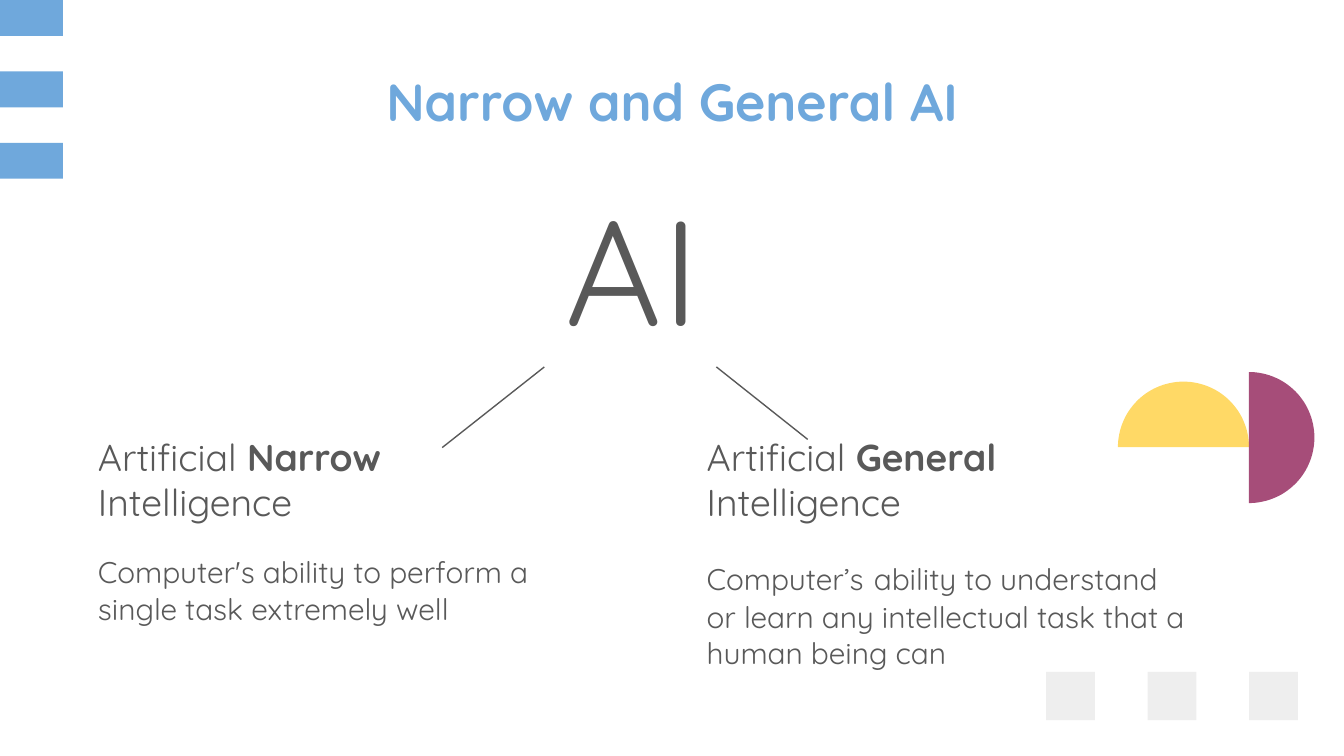
"""Build the slide on narrow and general AI."""
from math import cos, radians, sin

from lxml.etree import SubElement
from pptx import Presentation
from pptx.dml.color import RGBColor
from pptx.enum.shapes import MSO_CONNECTOR, MSO_SHAPE
from pptx.enum.text import MSO_ANCHOR, PP_ALIGN
from pptx.oxml.ns import qn
from pptx.util import Pt

COLORS = {
    "blue": "6FA8DC",
    "grey": "EEEEEE",
    "yellow": "FFD966",
    "plum": "A64D79",
    "text": "595959",
}


def color(name):
    return RGBColor.from_string(COLORS[name])


def add_text(paragraphs, left, top, width, height, ink="text",
             align=PP_ALIGN.LEFT, anchor=MSO_ANCHOR.TOP):
    frame = slide.shapes.add_textbox(Pt(left), Pt(top), Pt(width), Pt(height)).text_frame
    frame.word_wrap = True
    frame.vertical_anchor = anchor
    frame.margin_left = frame.margin_right = Pt(7.2)
    frame.margin_top = frame.margin_bottom = Pt(7.2)
    for index, (runs, pitch, gap) in enumerate(paragraphs):
        paragraph = frame.add_paragraph() if index else frame.paragraphs[0]
        paragraph.alignment = align
        paragraph.line_spacing = Pt(pitch)
        paragraph.space_before = Pt(gap)
        for words, size, bold in runs:
            run = paragraph.add_run()
            run.text = words
            run.font.name = "Quicksand"
            run.font.size = Pt(size)
            run.font.bold = bold
            run.font.color.rgb = color(ink)


deck = Presentation()
deck.slide_width, deck.slide_height = Pt(720), Pt(405)
slide = deck.slides.add_slide(deck.slide_layouts[6])

squares = [("grey", 560.4 + 54.4 * i, 360, 26.2, 25.9) for i in range(3)]
stripes = [("blue", 0, 38.3 * i, 33.8, 19.2) for i in range(3)]
ornaments = []
for fill, left, top, width, height in squares + stripes:
    block = slide.shapes.add_shape(
        MSO_SHAPE.RECTANGLE, Pt(left), Pt(top), Pt(width), Pt(height))
    ornaments.append((block, fill))

radius = 35.1
for fill, center_x, center_y, start in [("yellow", 634, 239.6, 180), ("plum", 669.1, 234.4, -90)]:
    arc = [(Pt(center_x + radius * cos(radians(angle))),
            Pt(center_y + radius * sin(radians(angle))))
           for angle in range(start, start + 181, 3)]
    outline = slide.shapes.build_freeform(*arc[0])
    outline.add_line_segments(arc[1:], close=True)
    ornaments.append((outline.convert_to_shape(), fill))

for ornament, fill in ornaments:
    ornament.shadow.inherit = False
    ornament.fill.solid()
    ornament.fill.fore_color.rgb = color(fill)
    ornament.line.fill.background()

add_text([([("Narrow and General AI", 28, True)], 35, 0)], 56.2, 28.3, 607.6, 50,
         ink="blue", align=PP_ALIGN.CENTER, anchor=MSO_ANCHOR.MIDDLE)
add_text([([("AI", 80, False)], 96, 0)], 295.9, 87.8, 120.2, 110.4)

for start_x, start_y, end_x in [(236.9, 239.8, 291.6), (432.7, 235.4, 383.8)]:
    branch = slide.shapes.add_connector(
        MSO_CONNECTOR.STRAIGHT, Pt(start_x), Pt(start_y), Pt(end_x), Pt(196.6))
    branch.line.color.rgb = color("text")
    branch.line.width = Pt(0.75)
    SubElement(branch.element.spPr, qn("a:effectLst"))

kinds = [
    (45.4, "Narrow", 16,
     [("Computer's ability to perform a single task extremely well", 16, False)]),
    (371.5, "General", 20.3,
     [("Computer’s", 16, False), (" ", 20, False),
      ("ability to understand or learn any intellectual task that a human being can", 16, False)]),
]
for left, kind, gap, meaning in kinds:
    heading = [("Artificial ", 20, False), (kind, 20, True), (" Intelligence", 20, False)]
    add_text([(heading, 24.2, 0), (meaning, 19.4, gap)], left, 225, 272.2, 145)

deck.save("out.pptx")
